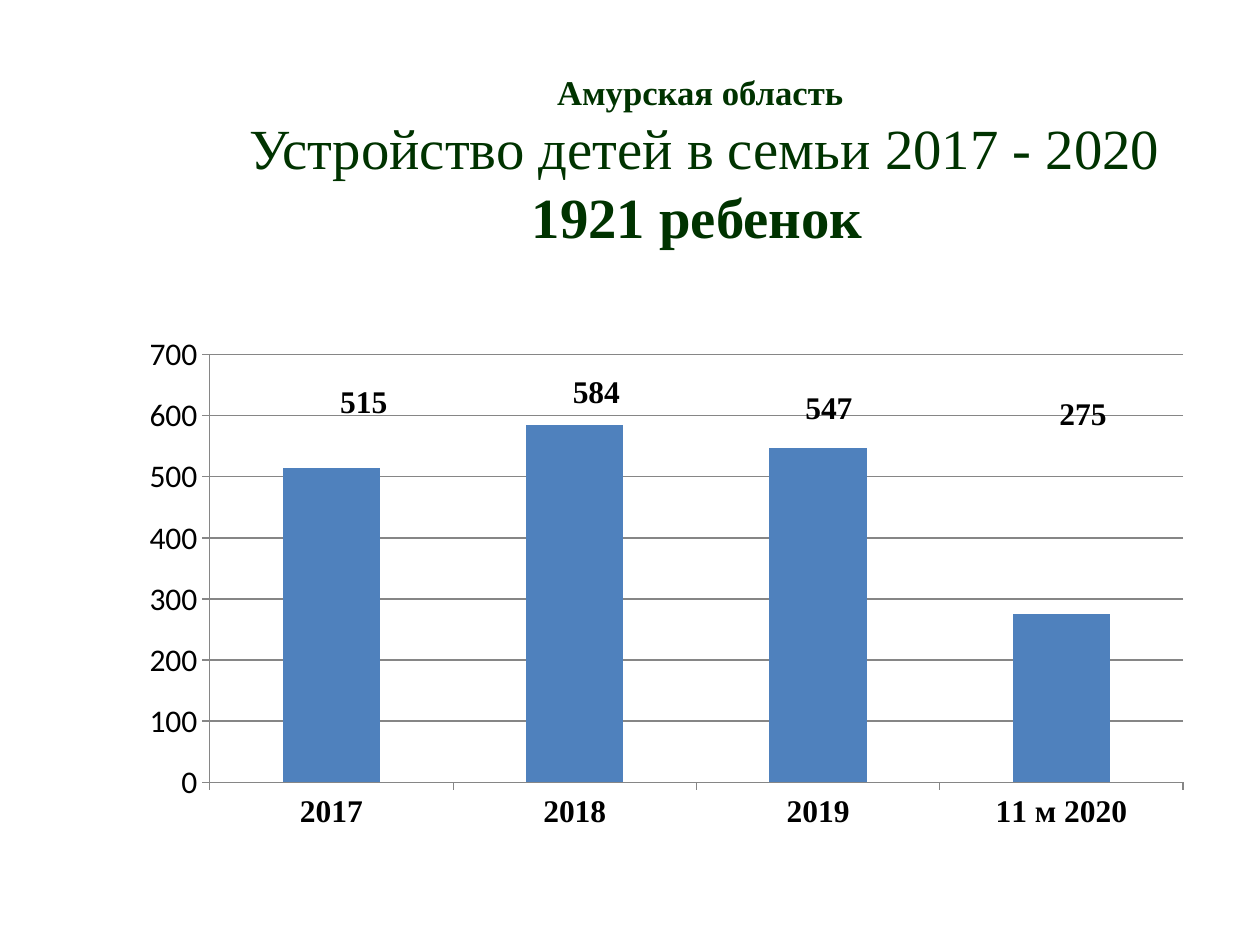
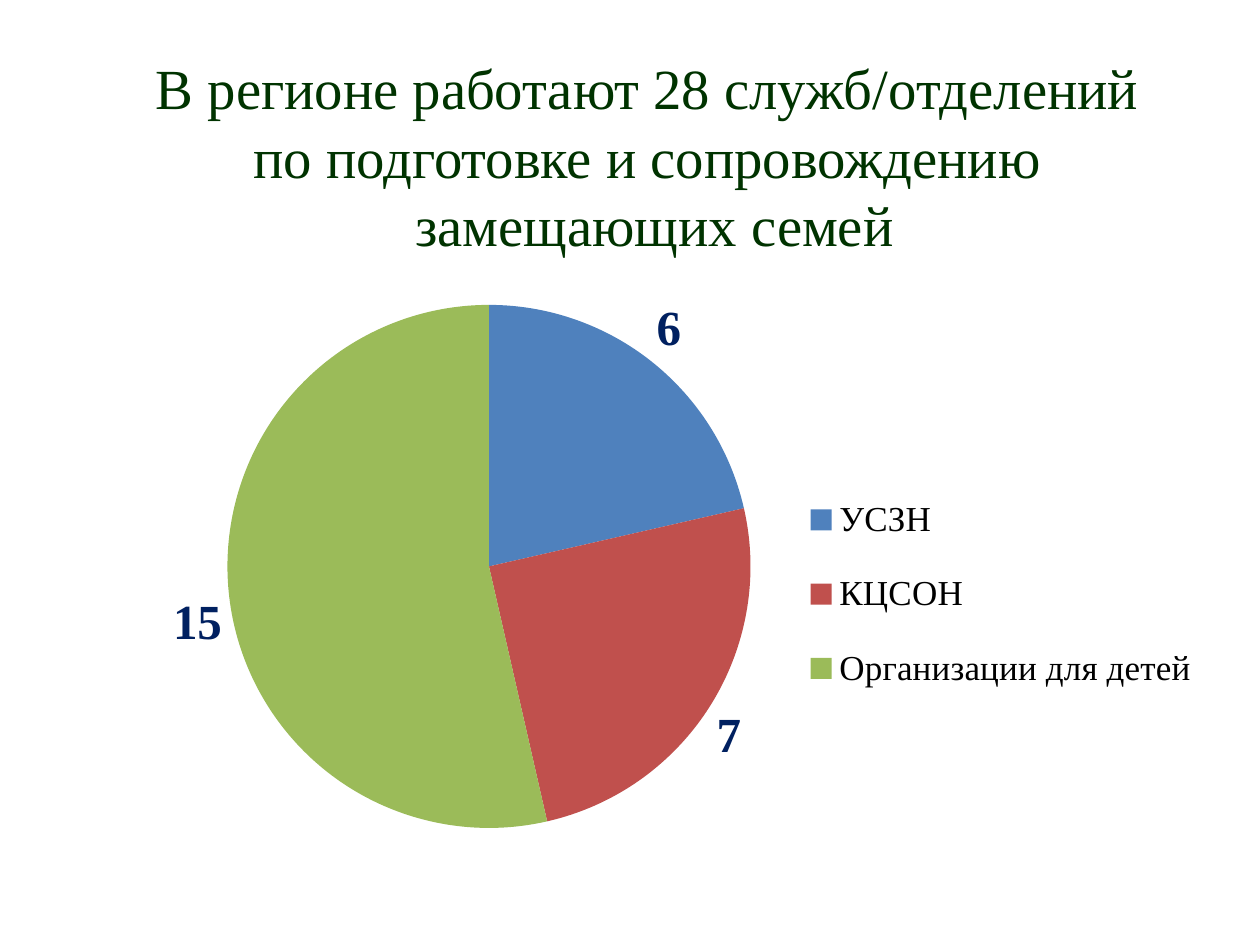
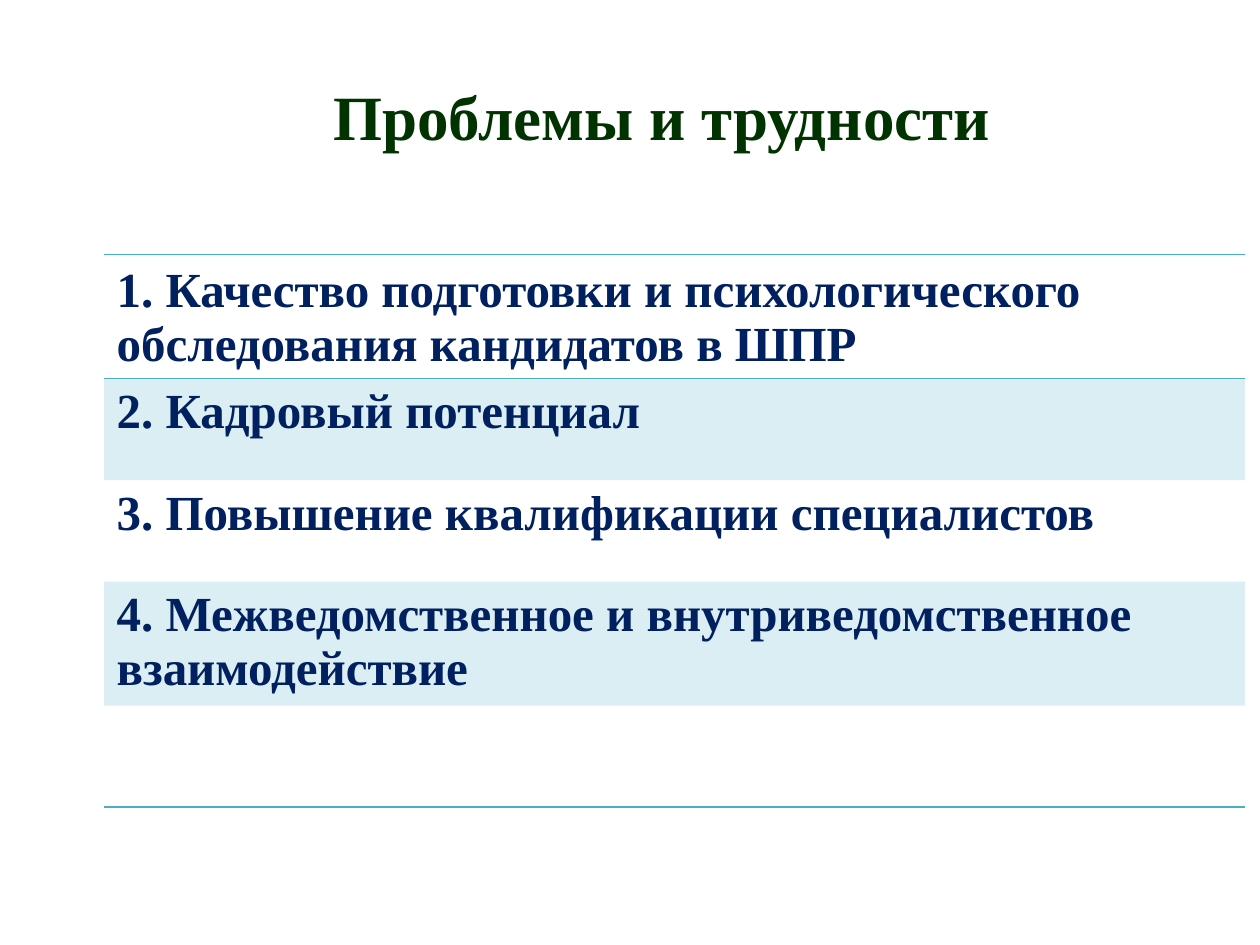
"""Builds three slides on placing children in families in the Amur region."""
from lxml.etree import SubElement
from pptx import Presentation
from pptx.chart.data import CategoryChartData
from pptx.dml.color import RGBColor
from pptx.enum.chart import XL_CHART_TYPE as ChartType
from pptx.enum.chart import XL_LABEL_POSITION as LabelPosition
from pptx.enum.chart import XL_LEGEND_POSITION as LegendPosition
from pptx.enum.chart import XL_TICK_MARK as TickMark
from pptx.enum.text import MSO_ANCHOR as Anchor
from pptx.enum.text import PP_ALIGN as Align
from pptx.oxml.ns import qn
from pptx.util import Pt

GREEN = RGBColor(0x00, 0x33, 0x00)
NAVY = RGBColor(0x00, 0x20, 0x60)
BLACK = RGBColor(0x00, 0x00, 0x00)
GREY = RGBColor(0x86, 0x86, 0x86)
BLUE = RGBColor(0x4F, 0x81, 0xBD)
RED = RGBColor(0xC0, 0x50, 0x4D)
OLIVE = RGBColor(0x9B, 0xBB, 0x59)
AQUA = RGBColor(0x4B, 0xAC, 0xC6)
SERIF = "Times New Roman"
NO_TABLE_STYLE = "{2D5ABB26-0587-4C30-8999-92F81FD0307C}"


def write_text(frame, text, *, size, colour, bold=False, align=Align.LEFT, leading=None):
    """Adds one paragraph to a text frame."""
    first = frame.paragraphs[0]
    paragraph = frame.add_paragraph() if first.runs else first
    paragraph.alignment = align
    if leading:
        paragraph.line_spacing = Pt(leading)
    run = paragraph.add_run()
    run.text = text
    run.font.name = SERIF
    run.font.size = Pt(size)
    run.font.bold = bold
    run.font.color.rgb = colour


def set_layout(parent, index, **settings):
    """Gives a chart part a manual layout, as its child at the index."""
    for old in parent.findall(qn("c:layout")):
        parent.remove(old)
    layout = SubElement(parent, qn("c:layout"))
    manual = SubElement(layout, qn("c:manualLayout"))
    for key, value in settings.items():
        SubElement(manual, qn(f"c:{key}")).set("val", str(value))
    parent.insert(index, layout)


deck = Presentation()
deck.slide_width, deck.slide_height = Pt(720), Pt(540)

titles = [
    ((99, 21, 607, 141), 3.6, [
        ("Амурская область ", 19.8, True, 24),
        ("Устройство детей в семьи 2017 - 2020", 32.4, False, 39),
        ("1921 ребенок ", 32.4, True, 39),
    ]),
    ((42.5, 21, 663, 169), 37, [
        ("В регионе работают 28 служб/отделений ", 32.4, False, 39),
        ("по подготовке и сопровождению ", 32.4, False, 39),
        ("замещающих семей", 32.4, False, 39),
    ]),
    ((60, 21, 636, 90), 3.6, [("Проблемы и трудности", 36, True, 43)]),
]
slides = []
for box, bottom_inset, lines in titles:
    slide = deck.slides.add_slide(deck.slide_layouts[6])
    slides.append(slide)
    title = slide.shapes.add_textbox(*map(Pt, box)).text_frame
    title.word_wrap = True
    title.vertical_anchor = Anchor.MIDDLE
    title.margin_bottom = Pt(bottom_inset)
    for text, size, bold, leading in lines:
        write_text(title, text, size=size, colour=GREEN, bold=bold,
                   align=Align.CENTER, leading=leading)
placement_slide, services_slide, problems_slide = slides

chart_specs = [
    (placement_slide, ChartType.COLUMN_STACKED, (70.5, 185, 618, 294.5),
     ["2017", "2018", "2019", "11 м 2020"], [515, 584, 547, 275],
     dict(x=0.08, y=0.06, w=0.9, h=0.83)),
    (services_slide, ChartType.PIE, (60, 157, 636, 351),
     ["УСЗН", "КЦСОН", "Организации для детей"], [6, 7, 15],
     dict(x=0.11, y=0.04, w=0.47, h=0.87)),
]
charts = []
for slide, kind, box, categories, values, plot_area in chart_specs:
    data = CategoryChartData()
    data.categories = categories
    data.add_series("Series 1", values)
    chart = slide.shapes.add_chart(kind, *map(Pt, box), data).chart
    chart.has_title = False
    chart.has_legend = False
    chart.font.name = "Calibri"
    chart.font.size = Pt(18)
    chart.font.color.rgb = BLACK
    area = chart.plots[0]._element.getparent()
    set_layout(area, 0, layoutTarget="inner", xMode="edge", yMode="edge", **plot_area)
    charts.append(chart)
placements, services = charts

columns = placements.plots[0]
columns.gap_width = 150
columns.overlap = 100
columns.vary_by_categories = False
children = columns.series[0]
children.format.fill.solid()
children.format.fill.fore_color.rgb = BLUE
label_shifts = [(0.03, -0.43), (0.02, -0.41), (0.01, -0.4), (0.02, -0.55)]
for index in range(len(label_shifts)):
    label_font = children.points[index].data_label.font
    label_font.name = SERIF
    label_font.size = Pt(18)
    label_font.bold = True
    label_font.color.rgb = BLACK
for label, (dx, dy) in zip(children._element.iter(qn("c:dLbl")), label_shifts):
    set_layout(label, 1, x=dx, y=dy)
for leader_lines in children._element.iter(qn("c:showLeaderLines")):
    leader_lines.set("val", "0")
extensions = SubElement(children.data_labels._element, qn("c:extLst"))
extension = SubElement(extensions, qn("c:ext"), uri="{CE6537A1-D6FC-4f65-9D91-7224C49458BB}")
CHART_2012 = "http://schemas.microsoft.com/office/drawing/2012/chart"
SubElement(extension, f"{{{CHART_2012}}}showLeaderLines", nsmap={"c15": CHART_2012}, val="0")

years, counts = placements.category_axis, placements.value_axis
for axis in (years, counts):
    axis.format.line.color.rgb = GREY
    axis.major_tick_mark = TickMark.OUTSIDE
    axis.minor_tick_mark = TickMark.NONE
years.tick_labels.font.name = SERIF
years.tick_labels.font.size = Pt(18)
years.tick_labels.font.bold = True
counts.minimum_scale, counts.maximum_scale, counts.major_unit = 0, 700, 100
counts.has_major_gridlines = True
counts.major_gridlines.format.line.color.rgb = GREY

pie = services.plots[0]
pie.vary_by_categories = True
for index, colour in enumerate([BLUE, RED, OLIVE]):
    sector = pie.series[0].points[index].format
    sector.fill.solid()
    sector.fill.fore_color.rgb = colour
    sector.line.fill.background()
labels = pie.series[0].data_labels
labels.show_value = True
labels.show_percentage = False
labels.position = LabelPosition.OUTSIDE_END
labels.font.name = SERIF
labels.font.size = Pt(28)
labels.font.bold = True
labels.font.color.rgb = NAVY
services.has_legend = True
legend = services.legend
legend.position = LegendPosition.RIGHT
legend.include_in_layout = False
legend.font.name = SERIF
legend.font.size = Pt(20)
set_layout(legend._element, 1, xMode="edge", yMode="edge", x=0.62, y=0.31, w=0.37, h=0.42)

problems = [
    "1. Качество подготовки и психологического обследования кандидатов в ШПР",
    "2. Кадровый потенциал",
    "3. Повышение квалификации специалистов",
    "4. Межведомственное и внутриведомственное взаимодействие",
    "",
]
ruled_sides = {0: ("a:lnT", "a:lnB"), len(problems) - 1: ("a:lnB",)}
frame = problems_slide.shapes.add_table(len(problems), 2, Pt(59.5), Pt(145.5), Pt(652), Pt(290))
table = frame.table
table.first_row = table.horz_banding = False
table._tbl.tblPr.find(qn("a:tableStyleId")).text = NO_TABLE_STYLE
table.columns[0].width, table.columns[1].width = Pt(626), Pt(26)
for row, problem in enumerate(problems):
    table.rows[row].height = Pt(58)
    if problem:
        write_text(table.cell(row, 0).text_frame, problem, size=28, colour=NAVY, bold=True)
    for cell in table.rows[row].cells:
        properties = cell._tc.get_or_add_tcPr()
        for side in ruled_sides.get(row, ()):
            border = SubElement(properties, qn(side), w=str(Pt(1)))
            paint = SubElement(border, qn("a:solidFill"))
            SubElement(paint, qn("a:srgbClr"), val=str(AQUA))
        if row % 2:
            cell.fill.solid()
            cell.fill.fore_color.rgb = AQUA
            tint = properties.find(".//" + qn("a:srgbClr"))
            SubElement(tint, qn("a:alpha"), val="20000")
        else:
            cell.fill.background()
table.cell(0, 0).vertical_anchor = Anchor.BOTTOM
table.cell(0, 0).margin_top = 0
table.cell(3, 0).margin_bottom = 0

deck.save("out.pptx")
